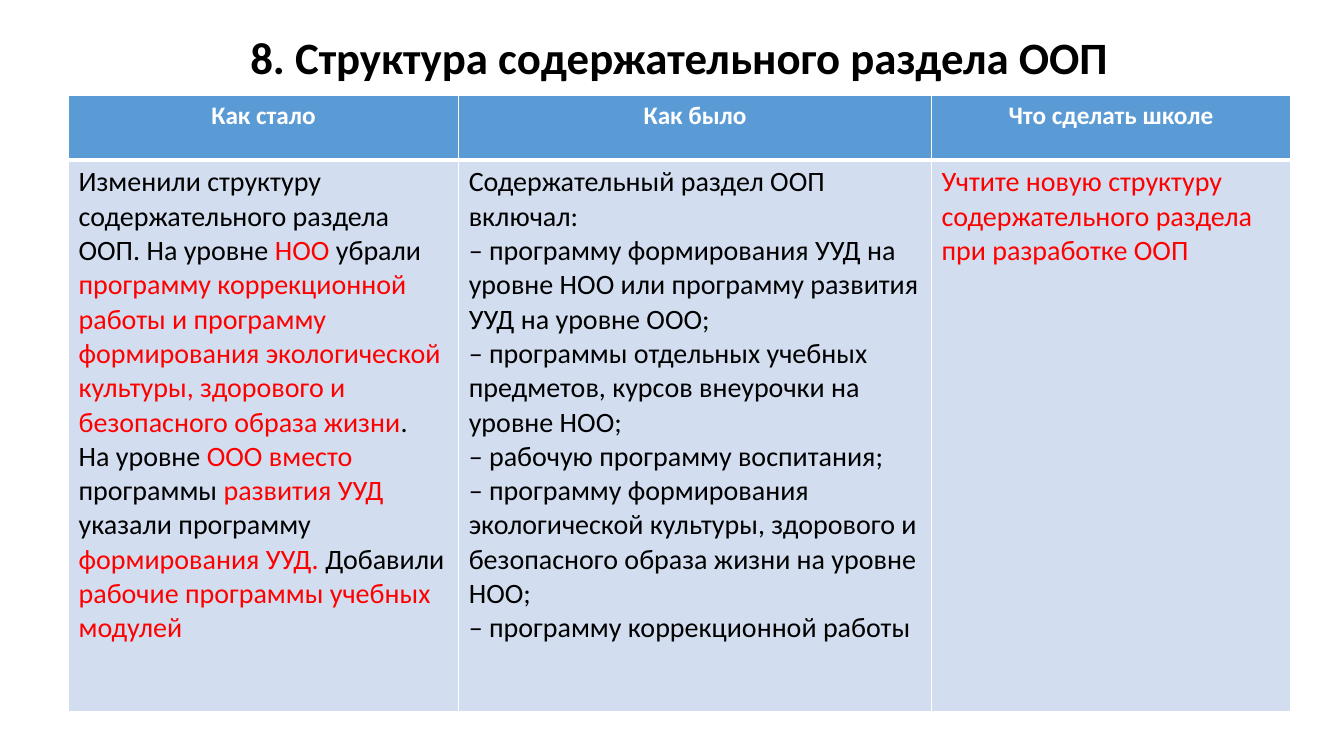
from dataclasses import dataclass

from lxml import etree
from pptx import Presentation
from pptx.dml.color import RGBColor
from pptx.enum import text
from pptx.oxml import ns
from pptx.util import Inches, Pt


@dataclass(frozen=True)
class Theme:
    font: str = "Calibri"
    ink: str = "000000"
    accent: str = "FF0000"
    white: str = "FFFFFF"
    header_fill: str = "5B9BD5"
    body_fill: str = "D2DEEF"
    title_size: int = 32
    header_size: int = 18
    body_size: int = 20
    thin: int = 1
    thick: int = 3


TITLE = "8. Структура содержательного раздела ООП"
HEADERS = ["Как стало", "Как было", "Что сделать школе"]
COLUMN_WIDTHS = [3.87, 4.69, 3.56]
ROW_HEIGHTS = [0.64, 5.47]

# Text between a pair of bars is set in the accent colour.
BODY = [
    [
        "Изменили структуру содержательного раздела ООП. На уровне |НОО| убрали "
        "|программу коррекционной работы и программу формирования экологической "
        "культуры, здорового и безопасного образа жизни|.",
        "На уровне |ООО вместо| программы |развития УУД |указали программу "
        "|формирования УУД. |Добавили |рабочие программы учебных модулей|",
    ],
    [
        "Содержательный раздел ООП включал:",
        "– программу формирования УУД на уровне НОО или программу развития УУД "
        "на уровне ООО;",
        "– программы отдельных учебных предметов, курсов внеурочки на уровне НОО;",
        "– рабочую программу воспитания;",
        "– программу формирования экологической культуры, здорового и безопасного "
        "образа жизни на уровне НОО;",
        "– программу коррекционной работы",
    ],
    ["|Учтите новую структуру содержательного раздела при разработке ООП|"],
]


class SlideBuilder:
    def __init__(self, page, theme):
        self.page = page
        self.theme = theme

    def set_text(self, frame, lines, size, color, bold=False, align=text.PP_ALIGN.LEFT):
        """Fill a text frame, one paragraph a line, with barred parts accented."""
        for index, line in enumerate(lines):
            para = frame.paragraphs[0] if index == 0 else frame.add_paragraph()
            para.alignment = align
            para.font.name = self.theme.font
            para.font.size = Pt(size)
            para.font.bold = bold
            for part, words in enumerate(line.split("|")):
                if words:
                    span = para.add_run()
                    span.text = words
                    shade = self.theme.accent if part % 2 else color
                    span.font.color.rgb = RGBColor.from_string(shade)

    def title(self, words, left, top, width, height):
        box = self.page.shapes.add_textbox(
            Inches(left), Inches(top), Inches(width), Inches(height))
        frame = box.text_frame
        frame.word_wrap = True
        frame.vertical_anchor = text.MSO_ANCHOR.MIDDLE
        self.set_text(frame, [words], self.theme.title_size, self.theme.ink,
                      bold=True, align=text.PP_ALIGN.CENTER)
        frame.paragraphs[0].line_spacing = 0.9

    def borders(self, cell, top, bottom):
        """Draw white cell borders; widths are in points."""
        properties = cell._tc.get_or_add_tcPr()
        thin = self.theme.thin
        for side, width in (("L", thin), ("R", thin), ("T", top), ("B", bottom)):
            line = etree.SubElement(properties, ns.qn(f"a:ln{side}"), w=str(Pt(width)))
            fill = etree.SubElement(line, ns.qn("a:solidFill"))
            etree.SubElement(fill, ns.qn("a:srgbClr"), val=self.theme.white)

    def fill(self, cell, color):
        cell.fill.solid()
        cell.fill.fore_color.rgb = RGBColor.from_string(color)

    def table(self, headers, body, left, top):
        theme = self.theme
        table = self.page.shapes.add_table(
            len(ROW_HEIGHTS), len(headers), Inches(left), Inches(top),
            Inches(sum(COLUMN_WIDTHS)), Inches(sum(ROW_HEIGHTS))).table
        for row, height in zip(table.rows, ROW_HEIGHTS):
            row.height = Inches(height)
        for index, width in enumerate(COLUMN_WIDTHS):
            table.columns[index].width = Inches(width)
            header, content = table.cell(0, index), table.cell(1, index)
            self.borders(header, theme.thin, theme.thick)
            self.fill(header, theme.header_fill)
            self.set_text(header.text_frame, [headers[index]], theme.header_size,
                          theme.white, bold=True, align=text.PP_ALIGN.CENTER)
            self.borders(content, theme.thick, theme.thin)
            self.fill(content, theme.body_fill)
            self.set_text(content.text_frame, body[index], theme.body_size, theme.ink)


def main():
    deck = Presentation()
    deck.slide_width, deck.slide_height = Inches(13.33), Inches(7.5)
    page = deck.slides.add_slide(deck.slide_layouts[6])
    builder = SlideBuilder(page, Theme())
    builder.title(TITLE, 0.99, 0.08, 11.5, 1.04)
    builder.table(HEADERS, BODY, 0.68, 0.95)
    deck.save("out.pptx")


if __name__ == "__main__":
    main()
